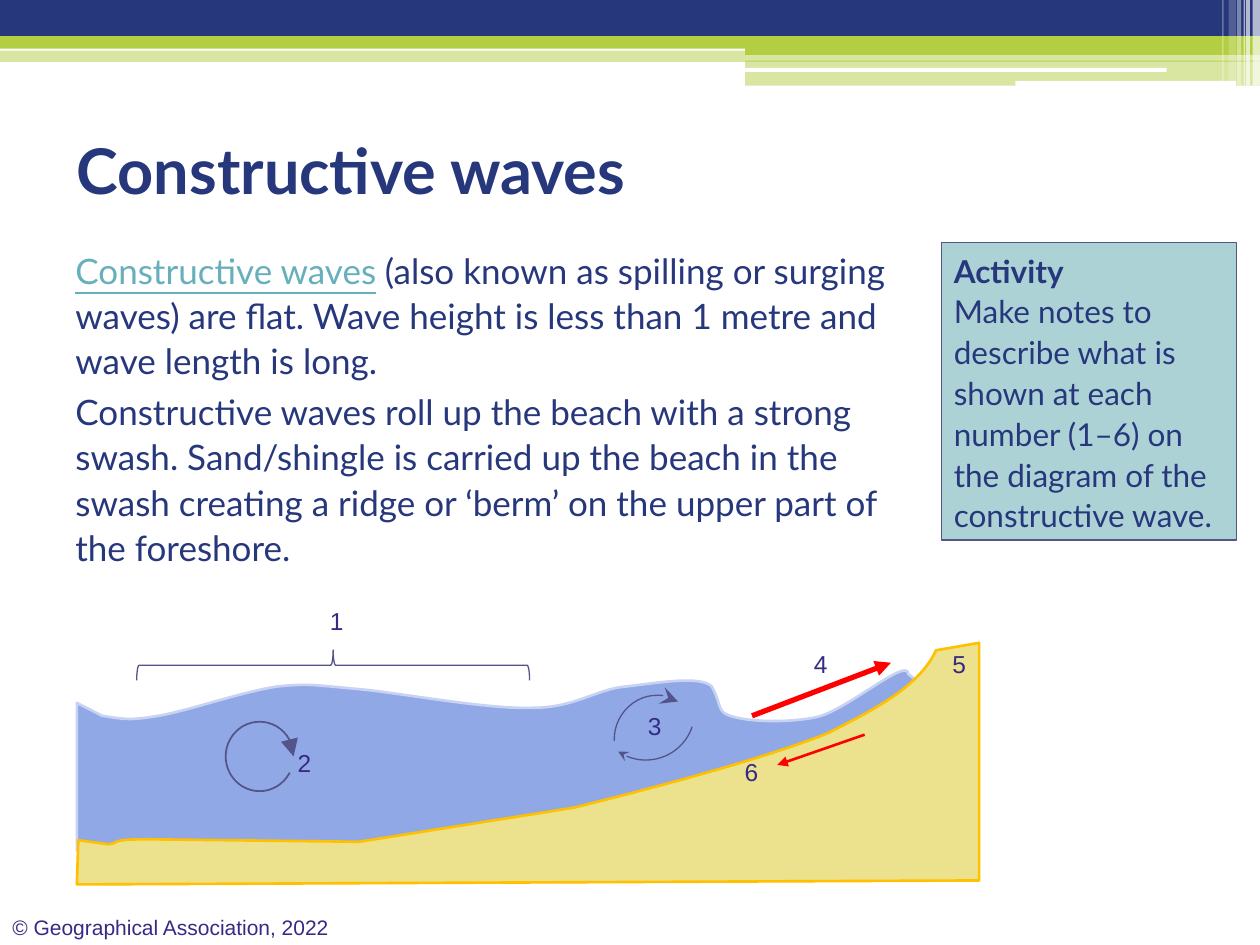
from pptx import Presentation
from pptx.dml.color import RGBColor
from pptx.enum.shapes import MSO_CONNECTOR, MSO_SHAPE
from pptx.enum.text import MSO_ANCHOR, PP_ALIGN
from pptx.oxml.ns import qn
from pptx.util import Cm, Pt
from lxml.etree import Element, SubElement

NAVY = RGBColor(0x26, 0x37, 0x7C)
GREEN = RGBColor(0xB4, 0xCE, 0x44)
WHITE = RGBColor(0xFF, 0xFF, 0xFF)
VIOLET = RGBColor(0x35, 0x2B, 0x84)
TEAL = RGBColor(0x67, 0xAF, 0xBD)
PALE = RGBColor(0xAD, 0xD2, 0xD6)
SLATE = RGBColor(0x53, 0x54, 0x8A)
SEA = RGBColor(0x91, 0xA8, 0xE7)
FOAM = RGBColor(0xC8, 0xD3, 0xF3)
SAND = RGBColor(0xEC, 0xE1, 0x8C)
GOLD = RGBColor(0xFF, 0xC0, 0x00)
RED = RGBColor(0xFF, 0x00, 0x00)

def paint(shape, fill=None, line=None, width=0.75, alpha=100):
    shape.shadow.inherit = False
    if fill is None:
        shape.fill.background()
    else:
        shape.fill.solid()
        shape.fill.fore_color.rgb = fill
        if alpha < 100:
            color = shape.fill._xPr.find(qn("a:solidFill"))[0]
            SubElement(color, qn("a:alpha"), val=str(alpha * 1000))
    if line is None:
        shape.line.fill.background()
    else:
        shape.line.color.rgb = line
        shape.line.width = Pt(width)

def add_form(slide, kind, x, y, w, h, **look):
    shape = slide.shapes.add_shape(kind, Cm(x), Cm(y), Cm(w), Cm(h))
    paint(shape, **look)
    return shape

def add_tip(shape, end, kind, size="med"):
    SubElement(shape.line._get_or_add_ln(), qn(f"a:{end}"),
               type=kind, w=size, len=size)

def add_box(slide, x, y, w, h, wrap=True):
    frame = slide.shapes.add_textbox(Cm(x), Cm(y), Cm(w), Cm(h)).text_frame
    frame.word_wrap = wrap
    return frame

def style(run, size, color, name="Lato", bold=False):
    font = run.font
    font.size, font.name, font.bold = Pt(size), name, bold
    font.color.rgb = color

def write(frame, text, *look, **more):
    frame.text = text
    style(frame.paragraphs[0].runs[0], *look, **more)

# Banner: stacked bands, then translucent stripes at the right edge
def draw_banner(slide, x, y, w):
    mid = 15.02
    bands = [(0, 1.02, w, 0.23, GREEN, 50), (0, 0, w, 0.86, NAVY, 100),
             (0, 0.73, w, 0.25, GREEN, 100),
             (mid, 0.86, w - mid, 0.25, GREEN, 100),
             (mid, 1.22, w - mid, 0.51, GREEN, 50)]
    stripes = [(25.25, 0.15, 1.73, 65), (25.12, 0.08, 1.73, 65),
               (25.07, 0.03, 1.73, 60), (24.94, 0.08, 1.73, 40),
               (24.77, 0.15, 1.63, 20), (24.64, 0.03, 1.63, 30)]
    for left, top, wide, high, color, alpha in bands:
        add_form(slide, MSO_SHAPE.RECTANGLE, x + left, y + top, wide, high,
                 fill=color, alpha=alpha)
    for left, top, wide, high in [(15.01, 1.37, 8.51, 0.08),
                                  (20.47, 1.63, 4.45, 0.1)]:
        add_form(slide, MSO_SHAPE.ROUNDED_RECTANGLE, x + left, y + top,
                 wide, high, fill=WHITE)
    for left, wide, high, alpha in stripes:
        add_form(slide, MSO_SHAPE.RECTANGLE, x + left, y, wide, high,
                 fill=WHITE, alpha=alpha)

def draw_title(slide, x, y, w, h):
    frame = add_box(slide, x, y, w, h)
    frame.vertical_anchor = MSO_ANCHOR.MIDDLE
    write(frame, "Constructive waves", 36, NAVY, bold=True)

def draw_body(slide, x, y, w, h):
    frame = add_box(slide, x, y, w, h)
    frame.margin_left = Cm(0.56)
    first, second = frame.paragraphs[0], frame.add_paragraph()
    parts = [
        (first, "Constructive waves", TEAL),
        (first, " ", NAVY),
        (first, "(also known as spilling or surging waves) are flat. Wave "
                "height is less than 1 metre and wave length is long.", NAVY),
        (second, "Constructive waves roll up the beach with a strong swash. "
                 "Sand/shingle is carried up the beach in the swash creating a "
                 "ridge or ‘berm’ on the upper part of the foreshore.", NAVY)]
    for para, text, color in parts:
        para.line_spacing = 1.08
        run = para.add_run()
        run.text = text
        style(run, 20, color, bold=text == " ")
        run.font.underline = color == TEAL
    second.space_before = Pt(3)

def draw_task(slide, x, y, w, h):
    box = add_form(slide, MSO_SHAPE.RECTANGLE, x, y, w, h,
                   fill=PALE, line=SLATE)
    frame = box.text_frame
    frame.word_wrap = True
    frame.vertical_anchor = MSO_ANCHOR.TOP
    frame.text = ("Activity\nMake notes to describe what is shown at each "
                  "number (1–6) on the diagram of the constructive wave.")
    for row, para in enumerate(frame.paragraphs):
        para.alignment = PP_ALIGN.LEFT
        para.line_spacing = 1.08
        style(para.runs[0], 18, NAVY, bold=row == 0)

# Outline from steps: two numbers are a straight line, six a Bezier curve
def add_outline(slide, x, y, steps, **look):
    ends = [(Cm(x + step[-2]), Cm(y + step[-1])) for step in steps]
    pen = slide.shapes.build_freeform(*ends[0])
    pen.add_line_segments(ends[1:], close=True)
    shape = pen.convert_to_shape()
    paint(shape, width=1.5, **look)
    lines = shape._element.spPr.findall(".//" + qn("a:lnTo"))
    for line, step in zip(lines, steps[1:]):
        if len(step) == 6:
            line.tag = qn("a:cubicBezTo")
            for spot, (a, b) in enumerate([step[:2], step[2:4]]):
                line.insert(spot, Element(qn("a:pt"),
                                          x=str(Cm(x + a) - shape.left),
                                          y=str(Cm(y + b) - shape.top)))

def add_arrow(slide, x, y, x2, y2, width):
    line = slide.shapes.add_connector(MSO_CONNECTOR.STRAIGHT, Cm(x), Cm(y),
                                      Cm(x2), Cm(y2))
    line.line.color.rgb = RED
    line.line.width = Pt(width)
    add_tip(line, "tailEnd", "triangle")
    SubElement(line._element.spPr, qn("a:effectLst"))

def add_arc(slide, box, start, stop, turn, *tip, width=0.75):
    arc = add_form(slide, MSO_SHAPE.ARC, *box, line=SLATE, width=width)
    arc.adjustments[0], arc.adjustments[1] = start, stop
    arc.rotation = turn
    add_tip(arc, *tip)
    return arc

def draw_beach(slide, x, y):
    # Sea
    add_outline(slide, x, y, [
        (0, 2.08), (0.51, 2.34), (0.94, 2.41, 1.07, 2.44, 1.65, 2.34),
        (2.24, 2.24, 3.35, 1.85, 4.04, 1.75),
        (4.7, 1.68, 4.83, 1.73, 5.66, 1.8),
        (6.53, 1.88, 8.26, 2.21, 9.17, 2.18),
        (10.06, 2.18, 10.46, 1.8, 11.07, 1.75),
        (11.68, 1.68, 12.57, 1.52, 12.8, 1.75),
        (13.03, 2.18, 12.88, 2.26, 13.23, 2.36),
        (13.59, 2.46, 14.35, 2.49, 14.94, 2.36),
        (15.54, 2.21, 16.76, 1.14, 16.76, 1.5), (17.15, 1.8),
        (14.22, 4.83), (0, 5.05), (0, 3.78, 0, 3.35, 0, 2.08)],
        fill=SEA, line=FOAM)
    # Swash and circling water
    add_arrow(slide, x + 13.61, y + 2.34, x + 16.41, y + 1.27, 3)
    add_arc(slide, (x + 10.8, y + 1.96, 1.7, 1.6), 138.19, 0, 303.6,
            "tailEnd", "stealth", "lg")
    low = add_arc(slide, (x + 10.49, y + 1.3, 1.96, 1.93), 138.19, 202.76,
                  355.4, "headEnd", "stealth")
    low._element.spPr.xfrm.set("flipV", "1")
    add_arc(slide, (x + 3, y + 2.46, 1.37, 1.4), 16.98, 0, 0,
            "tailEnd", "triangle", "lg", width=1)
    # Beach and backwash
    add_outline(slide, x, y, [
        (0.03, 4.85), (0.64, 4.93), (0.89, 4.9, 0.61, 4.83, 1.45, 4.83),
        (5.69, 4.88), (10.03, 4.19),
        (11.68, 3.78, 13.87, 3.2, 15.14, 2.69),
        (16.15, 2.18, 16.99, 1.73, 17.32, 1.02),
        (17.78, 0.94, 17.96, 0.91, 18.19, 0.87),
        (18.19, 5.66), (0, 5.74), (0.03, 4.85)], fill=SAND, line=GOLD)
    add_arrow(slide, x + 15.88, y + 2.72, x + 14.12, y + 3.33, 1.5)
    # Wave length brace and number labels
    brace = add_form(slide, MSO_SHAPE.LEFT_BRACE, x + 4.86, y - 2.64,
                     0.61, 7.92, line=SLATE)
    brace.rotation = 90
    spots = [(4.85, 0), (4.2, 2.87), (11.26, 2.11), (14.61, 0.86),
             (17.4, 0.86), (13.21, 3.05)]
    for count, (left, top) in enumerate(spots, 1):
        wide = 0.66 if count == 1 else 0.79
        frame = add_box(slide, x + left, y + top, wide, 0.86, count == 1)
        write(frame, str(count), 14, VIOLET, "Arial")

def main():
    deck = Presentation()
    deck.slide_width, deck.slide_height = Cm(25.4), Cm(19.05)
    slide = deck.slides.add_slide(deck.slide_layouts[6])
    draw_banner(slide, 0, 0, 25.4)
    write(add_box(slide, 0, 18.32, 7.29, 0.76),
          "© Geographical Association, 2022", 12, VIOLET, "Arial")
    draw_title(slide, 1.3, 1.93, 22.86, 2.97)
    draw_body(slide, 0.96, 4.83, 17.68, 7.44)
    draw_beach(slide, 1.55, 12.09)
    draw_task(slide, 18.98, 4.89, 5.95, 6)
    deck.save("out.pptx")

if __name__ == "__main__":
    main()
